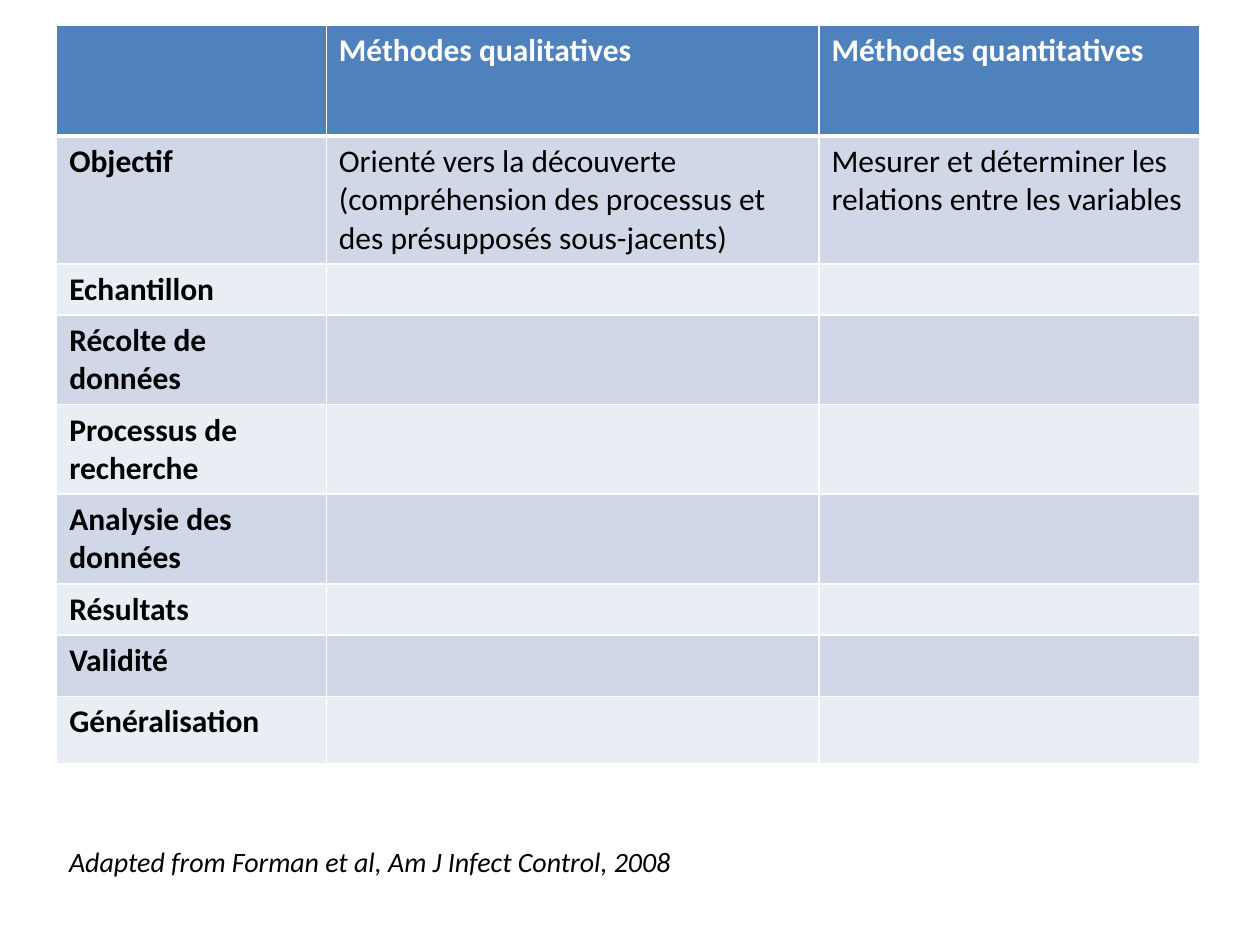
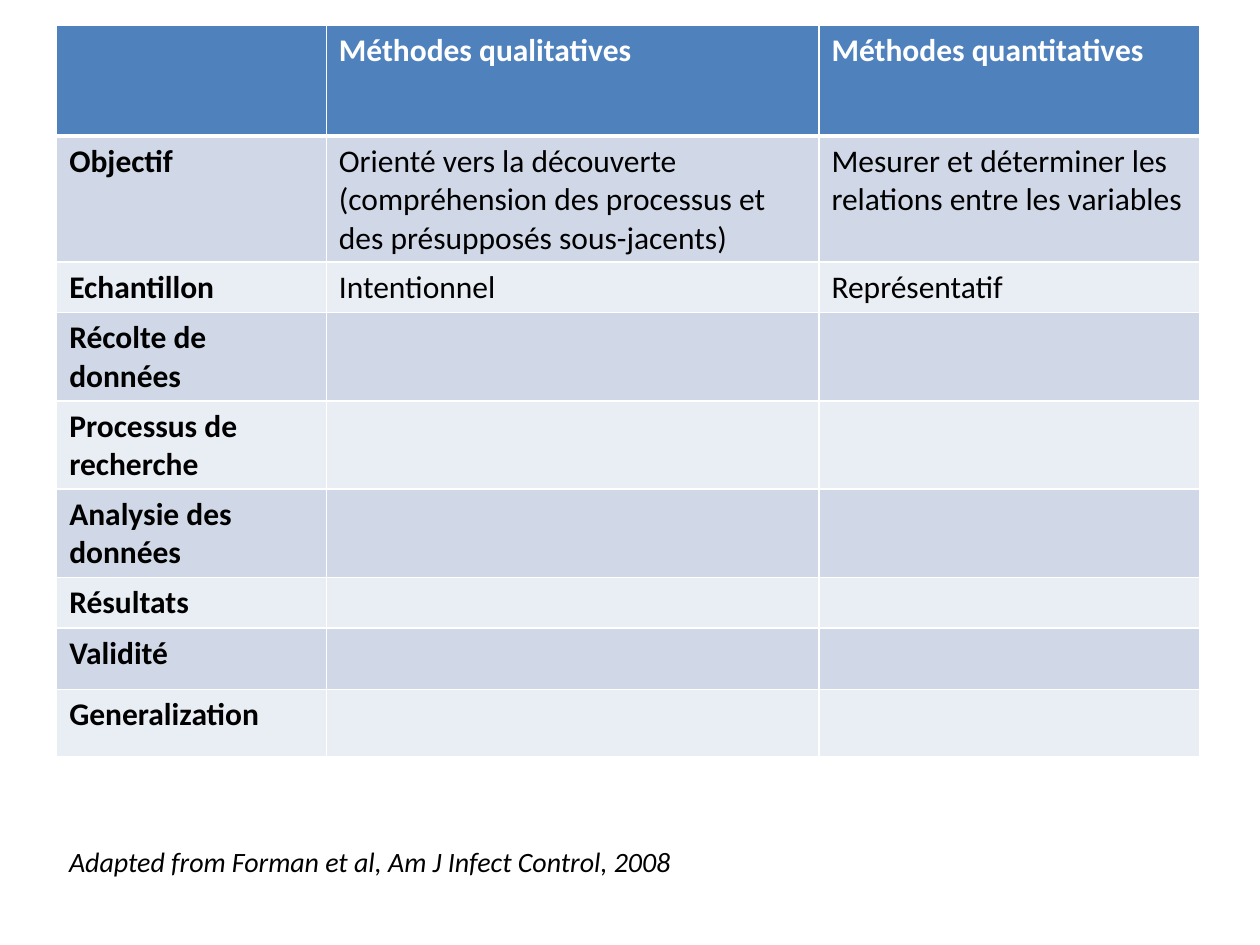
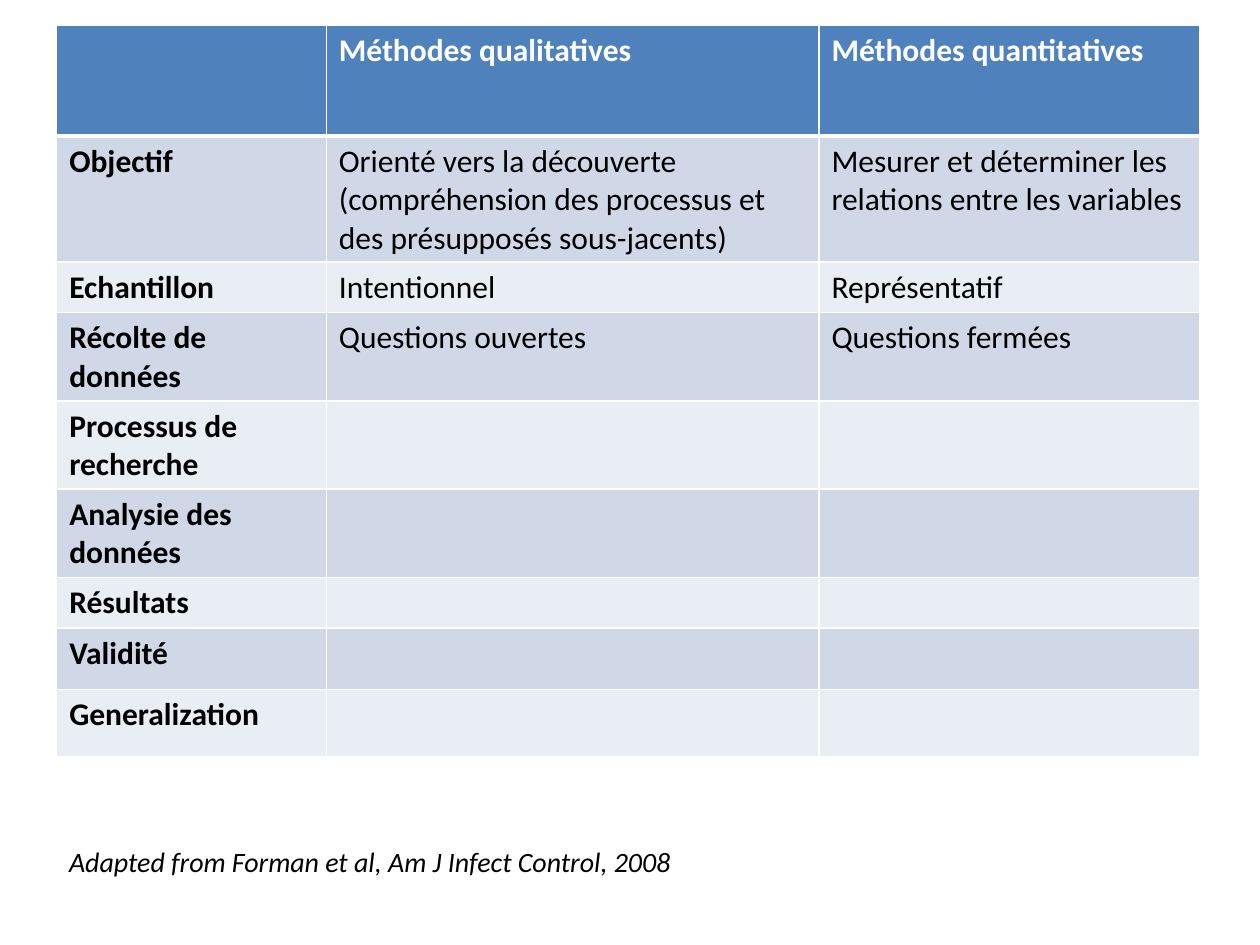
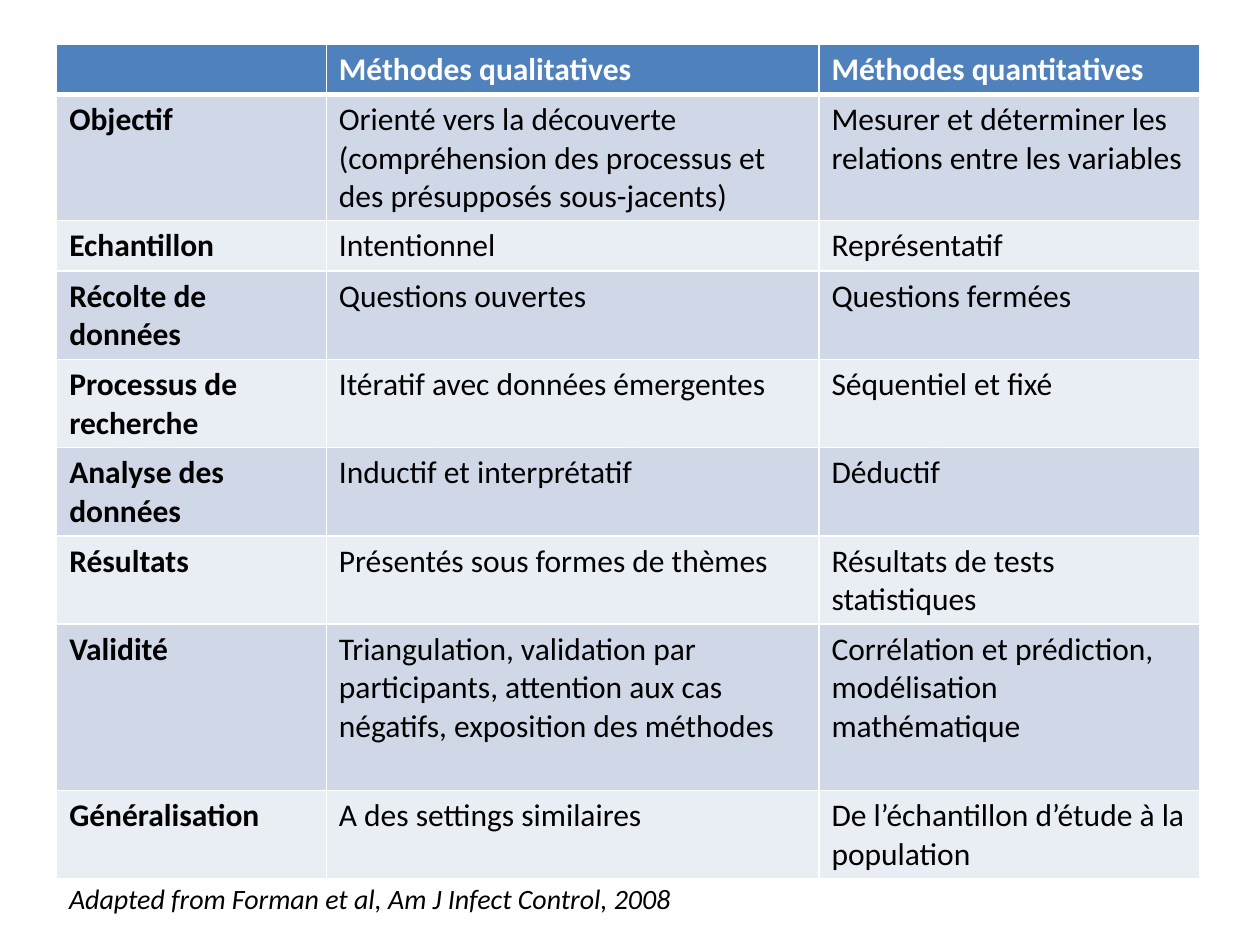
from pptx import Presentation
from pptx.dml.color import RGBColor
from pptx.oxml.ns import qn
from pptx.util import Inches, Pt
from lxml.etree import SubElement

COLORS = {
    "head": "4F81BD",
    "dark": "D0D8E8",
    "light": "E9EDF4",
    "white": "FFFFFF",
    "black": "000000",
}
HEADS = ("", "Méthodes qualitatives", "Méthodes quantitatives")
ROWS = (
    ("Objectif",
     "Orienté vers la découverte (compréhension des processus et des présupposés sous-jacents)",
     "Mesurer et déterminer les relations entre les variables"),
    ("Echantillon", "Intentionnel", "Représentatif"),
    ("Récolte de données", "Questions ouvertes", "Questions fermées"),
    ("Processus de recherche", "Itératif avec données émergentes", "Séquentiel et fixé"),
    ("Analyse des données", "Inductif et interprétatif", "Déductif"),
    ("Résultats", "Présentés sous formes de thèmes", "Résultats de tests statistiques"),
    ("Validité",
     "Triangulation, validation par participants, attention aux cas négatifs, exposition des méthodes",
     "Corrélation et prédiction, modélisation mathématique"),
    ("Généralisation", "A des settings similaires",
     "De l’échantillon d’étude à la population"),
)
SOURCE = "Adapted from Forman et al, Am J Infect Control, 2008"
WIDTHS = (21.4, 39.1, 30.2)
OPEN = (8.8, 9.5, 3.8, 6.6, 6.6, 6.6, 3.8, 4.9, 5.3)
FULL = (4, 9.6, 3.9, 6.7, 6.7, 6.7, 6.7, 13.2, 6.7)
DRAFT = {"Analyse des données": "Analysie des données"}
MIXED = {**DRAFT, "Généralisation": "Generalization"}
STEPS = (
    (1, DRAFT, OPEN, 2, 66.5),
    (2, MIXED, OPEN, 2, 66.5),
    (3, MIXED, OPEN, 2, 66.5),
    (len(ROWS), {}, FULL, 3.5, 69.5),
)


class Deck:
    font = "Calibri"
    left = 4.5
    cols, rows = 100, 75

    def __init__(self):
        self.prs = Presentation()
        self.prs.slide_width = Inches(10)
        self.prs.slide_height = Inches(7.5)
        self.slide = None

    def add(self):
        self.slide = self.prs.slides.add_slide(self.prs.slide_layouts[6])

    def wide(self, count):
        return int(self.prs.slide_width * count / self.cols)

    def tall(self, count):
        return int(self.prs.slide_height * count / self.rows)

    def label(self, frame, text, size, color, bold=False, italic=False):
        frame.text = text
        for run in frame.paragraphs[0].runs:
            font = run.font
            font.name, font.size = self.font, Pt(size)
            font.bold, font.italic = bold, italic
            font.color.rgb = RGBColor.from_string(COLORS[color])

    def edge(self, cell, row):
        props = cell._tc.get_or_add_tcPr()
        thick = {"lnB": row == 0, "lnT": row == 1}
        for side in ("lnL", "lnR", "lnT", "lnB"):
            width = Pt(3 if thick.get(side) else 1)
            line = SubElement(props, qn(f"a:{side}"), w=str(int(width)))
            fill = SubElement(line, qn("a:solidFill"))
            SubElement(fill, qn("a:srgbClr"), val=COLORS["white"])

    def table(self, data, top, highs):
        shape = self.slide.shapes.add_table(
            len(data), len(WIDTHS), self.wide(self.left), self.tall(top),
            self.wide(sum(WIDTHS)), self.tall(sum(highs)))
        grid = shape.table
        for col, width in zip(grid.columns, WIDTHS):
            col.width = self.wide(width)
        for row, (texts, high) in enumerate(zip(data, highs)):
            grid.rows[row].height = self.tall(high)
            band = "head" if row == 0 else ("light", "dark")[row % 2]
            ink = "black" if row else "white"
            for col, text in enumerate(texts):
                cell = grid.cell(row, col)
                self.edge(cell, row)
                cell.fill.solid()
                cell.fill.fore_color.rgb = RGBColor.from_string(COLORS[band])
                self.label(cell.text_frame, text, 18, ink, bold=row == 0 or col == 0)

    def note(self, text, top):
        box = self.slide.shapes.add_textbox(
            self.wide(self.left), self.tall(top), self.wide(50.1), self.tall(3.7))
        box.text_frame.word_wrap = True
        self.label(box.text_frame, text, 16, "black", italic=True)


def main():
    deck = Deck()
    for shown, names, highs, top, foot in STEPS:
        body = [(names.get(name, name), *(pair if row < shown else ("", "")))
                for row, (name, *pair) in enumerate(ROWS)]
        deck.add()
        deck.table([HEADS, *body], top, highs)
        deck.note(SOURCE, foot)
    deck.prs.save("out.pptx")


if __name__ == "__main__":
    main()
